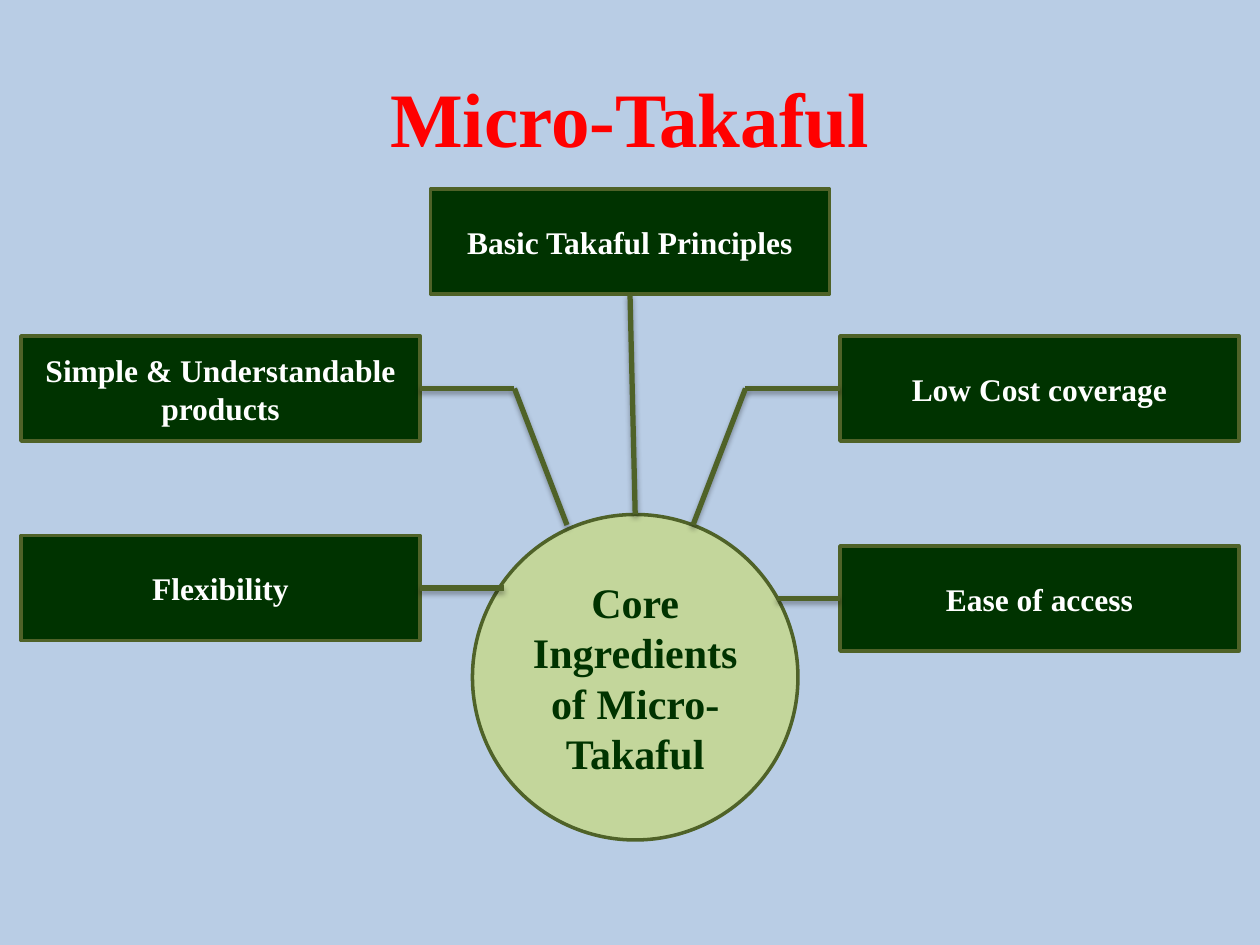
"""Build the Micro-Takaful slide: a core circle linked to five ingredients."""
from lxml import etree
from pptx import Presentation
from pptx import util as u
from pptx.dml.color import RGBColor
from pptx.enum import shapes, text
from pptx.oxml import ns

COLORS = {
    "background": "B9CDE5",
    "title": "FF0000",
    "dark": "003300",
    "outline": "4F6228",
    "circle": "C3D69B",
    "white": "FFFFFF",
    "shadow": "000000",
}
TITLE = "Micro-Takaful"
CORE = "Core Ingredients of Micro-Takaful"
BOX_WIDTH, BOX_HEIGHT = 228, 60
LEFT, CENTER, RIGHT = 12, 246, 480
CORE_LEFT, CORE_TOP, CORE_SIZE = 270, 294, 186

INGREDIENTS = [
    ("Basic Takaful Principles", CENTER, 108, [(CORE_LEFT + CORE_SIZE / 2, CORE_TOP)]),
    ("Flexibility", LEFT, 306, [(288, 336)]),
    ("Simple & Understandable products", LEFT, 192, [(294, 222), (324, 300)]),
    ("Ease of access", RIGHT, 312, [(444, 342)]),
    ("Low Cost coverage", RIGHT, 192, [(426, 222), (396, 300)]),
]


def rgb(name):
    return RGBColor.from_string(COLORS[name])


def write(shape, words, size, color):
    frame = shape.text_frame
    frame.text = words
    frame.word_wrap = True
    frame.vertical_anchor = text.MSO_ANCHOR.MIDDLE
    paragraph = frame.paragraphs[0]
    paragraph.alignment = text.PP_ALIGN.CENTER
    font = paragraph.runs[0].font
    font.color.rgb = rgb(color)
    values = {"name": "Times New Roman", "size": u.Pt(size), "bold": True}
    for attribute, value in values.items():
        setattr(font, attribute, value)


def draw_outline(shape, width):
    shape.line.color.rgb = rgb("outline")
    shape.line.width = u.Pt(width)


def add_node(slide, kind, bounds, fill, words, size, color):
    shape = slide.shapes.add_shape(kind, *map(u.Pt, bounds))
    shape.shadow.inherit = False
    shape.fill.solid()
    shape.fill.fore_color.rgb = rgb(fill)
    draw_outline(shape, 2)
    write(shape, words, size, color)


def add_link(slide, start, end):
    connector = slide.shapes.add_connector(
        shapes.MSO_CONNECTOR.STRAIGHT, *map(u.Pt, (*start, *end)))
    draw_outline(connector, 3)
    effects = etree.SubElement(connector._element.spPr, ns.qn("a:effectLst"))
    shadow = etree.SubElement(
        effects, ns.qn("a:outerShdw"), blurRad=str(u.Pt(3.1)),
        dist=str(u.Pt(1.8)), dir="5400000", rotWithShape="0")
    color = etree.SubElement(shadow, ns.qn("a:srgbClr"), val=COLORS["shadow"])
    etree.SubElement(color, ns.qn("a:alpha"), val="35000")


def link_start(left, top):
    if left == CENTER:
        return left + BOX_WIDTH / 2, top + BOX_HEIGHT
    edge = left + BOX_WIDTH if left == LEFT else left
    return edge, top + BOX_HEIGHT / 2


def main():
    presentation = Presentation()
    presentation.slide_width, presentation.slide_height = u.Pt(720), u.Pt(540)
    slide = presentation.slides.add_slide(presentation.slide_layouts[5])
    slide.background.fill.solid()
    slide.background.fill.fore_color.rgb = rgb("background")

    title = slide.shapes.title
    bounds = {"left": 36, "top": 21.6, "width": 648, "height": 90}
    for attribute, value in bounds.items():
        setattr(title, attribute, u.Pt(value))
    write(title, TITLE, 44, "title")

    for words, left, top, _ in INGREDIENTS:
        add_node(slide, shapes.MSO_SHAPE.RECTANGLE,
                 (left, top, BOX_WIDTH, BOX_HEIGHT), "dark", words, 18, "white")
    add_node(slide, shapes.MSO_SHAPE.OVAL,
             (CORE_LEFT, CORE_TOP, CORE_SIZE, CORE_SIZE), "circle", CORE, 24, "dark")
    for _, left, top, stops in INGREDIENTS:
        points = [link_start(left, top), *stops]
        for start, end in zip(points, stops):
            add_link(slide, start, end)

    presentation.save("out.pptx")


if __name__ == "__main__":
    main()
